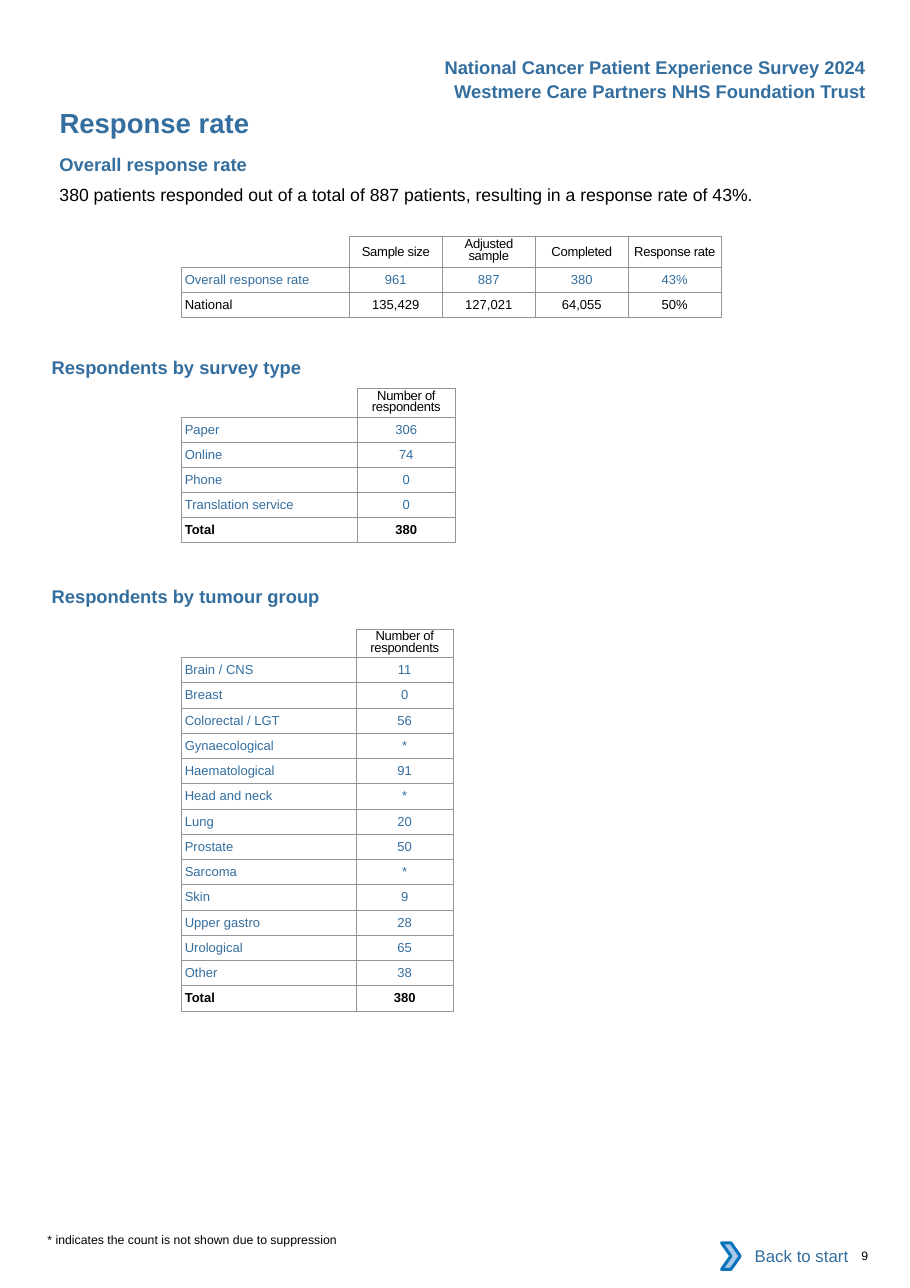
from lxml.etree import SubElement
from pptx import Presentation
from pptx.dml.color import RGBColor
from pptx.enum.shapes import MSO_SHAPE as Shape
from pptx.enum.text import MSO_ANCHOR as Anchor, MSO_AUTO_SIZE as AutoSize, PP_ALIGN as Align
from pptx.oxml.ns import qn
from pptx.util import Pt

BLUE, BLACK, GREY = "336E9F", "000000", "939598"


def rgb(value):
    return RGBColor.from_string(value)


def write(frame, text, size, color, bold=False, align=Align.LEFT, anchor=Anchor.TOP, spacing=0):
    frame.text = text
    frame.word_wrap = True
    frame.vertical_anchor = anchor
    paragraph = frame.paragraphs[0]
    paragraph.alignment = align
    font = paragraph.runs[0].font
    font.name, font.size, font.bold = "Arial", Pt(size), bold
    font.color.rgb = rgb(color)
    if spacing:
        paragraph.runs[0]._r.get_or_add_rPr().set("spc", str(spacing))


prs = Presentation()
prs.slide_width, prs.slide_height = Pt(594.7), Pt(841.7)
slide = prs.slides.add_slide(prs.slide_layouts[5])

title = slide.shapes.title
title.left, title.top, title.width, title.height = Pt(38.9), Pt(69.1), Pt(297), Pt(21.6)
lines = [
    (title, "Response rate", 18, BLUE, True, Align.LEFT),
]
for left, top, width, height, text, size, color, bold, align in [
    (282, 36.7, 284, 14.4, "National Cancer Patient Experience Survey 2024", 12, BLUE, True, Align.RIGHT),
    (282, 52.6, 284, 14.4, "Westmere Care Partners NHS Foundation Trust", 12, BLUE, True, Align.RIGHT),
    (38.9, 100.1, 297, 14.4, "Overall response rate", 12, BLUE, True, Align.LEFT),
    (38.9, 120.2, 518, 13.7,
     "380 patients responded out of a total of 887 patients, resulting in a response rate of 43%.",
     11.5, BLACK, False, Align.LEFT),
    (33.8, 232.6, 200, 14.4, "Respondents by survey type", 12, BLUE, True, Align.LEFT),
    (33.8, 382.3, 200, 14.4, "Respondents by tumour group", 12, BLUE, True, Align.LEFT),
    (31, 805, 220, 9.4, "* indicates the count is not shown due to suppression", 8, BLACK, False, Align.LEFT),
    (563, 815.8, 20, 9.4, "9", 8, BLACK, False, Align.LEFT),
]:
    box = slide.shapes.add_textbox(Pt(left), Pt(top), Pt(width), Pt(height))
    lines.append((box, text, size, color, bold, align))

for box, text, size, color, bold, align in lines:
    frame = box.text_frame
    frame.margin_left = frame.margin_right = frame.margin_top = frame.margin_bottom = 0
    write(frame, text, size, color, bold, align)
    frame.auto_size = AutoSize.NONE

overall = [
    ["", "Sample size", "Adjusted sample", "Completed", "Response rate"],
    ["Overall response rate", "961", "887", "380", "43%"],
    ["National", "135,429", "127,021", "64,055", "50%"],
]
survey_types = [
    ["", "Number of respondents"],
    ["Paper", "306"],
    ["Online", "74"],
    ["Phone", "0"],
    ["Translation service", "0"],
    ["Total", "380"],
]
tumour_groups = [
    ["", "Number of respondents"],
    ["Brain / CNS", "11"],
    ["Breast", "0"],
    ["Colorectal / LGT", "56"],
    ["Gynaecological", "*"],
    ["Haematological", "91"],
    ["Head and neck", "*"],
    ["Lung", "20"],
    ["Prostate", "50"],
    ["Sarcoma", "*"],
    ["Skin", "9"],
    ["Upper gastro", "28"],
    ["Urological", "65"],
    ["Other", "38"],
    ["Total", "380"],
]

for rows, top, label_width, value_width, header_height, row_height in [
    (overall, 154.3, 109.7, 60.8, 20.2, 16.4),
    (survey_types, 253.8, 114.9, 64, 19, 16.4),
    (tumour_groups, 411.2, 114.2, 63.4, 18.5, 16.5),
]:
    value_columns = len(rows[0]) - 1
    table = slide.shapes.add_table(
        len(rows), value_columns + 1, Pt(118.6), Pt(top),
        Pt(label_width + value_columns * value_width),
        Pt(header_height + (len(rows) - 1) * row_height)).table
    table.first_row = table.horz_banding = False
    for c, column in enumerate(table.columns):
        column.width = Pt(value_width if c else label_width)
    for r, values in enumerate(rows):
        table.rows[r].height = Pt(row_height if r else header_height)
        for c, value in enumerate(values):
            cell = table.cell(r, c)
            cell.margin_left = cell.margin_right = Pt(2.2)
            cell.margin_top = cell.margin_bottom = 0
            cell.vertical_anchor = Anchor.MIDDLE
            corner = r == 0 and c == 0
            properties = cell._tc.get_or_add_tcPr()
            for side in ("lnL", "lnR", "lnT", "lnB"):
                border = SubElement(properties, qn(f"a:{side}"), w=str(Pt(0.5)))
                if corner and side in ("lnL", "lnT"):
                    SubElement(border, qn("a:noFill"))
                else:
                    fill = SubElement(border, qn("a:solidFill"))
                    SubElement(fill, qn("a:srgbClr"), val=GREY)
            cell.fill.background()
            if corner:
                cell.text_frame.paragraphs[0].font.size = Pt(8.5)
                continue
            is_black = r == 0 or values[0] in ("National", "Total")
            write(cell.text_frame, value, 8.5, BLACK if is_black else BLUE, values[0] == "Total",
                  Align.CENTER if c else Align.LEFT, Anchor.MIDDLE, 0 if r else -20)
            if "Adjusted" in value or "Number" in value:
                cell.text_frame.paragraphs[0].line_spacing = Pt(7.6)

back_button = slide.shapes.add_shape(Shape.RECTANGLE, Pt(476.6), Pt(805.7), Pt(85), Pt(30.2))
back_button.fill.solid()
back_button.fill.fore_color.rgb = rgb("FFFFFF")
back_button.line.fill.background()
write(back_button.text_frame, "Back to start", 11, BLUE, False, Align.RIGHT, Anchor.MIDDLE)

arrow = slide.shapes.add_shape(Shape.CHEVRON, Pt(471.6), Pt(812.2), Pt(12.2), Pt(17.3))
arrow.fill.solid()
arrow.fill.fore_color.rgb = rgb("A8C7E9")
arrow.line.color.rgb = rgb("0A74BB")
arrow.line.width = Pt(2)
for part in (back_button, arrow):
    part.shadow.inherit = False

prs.save("out.pptx")
